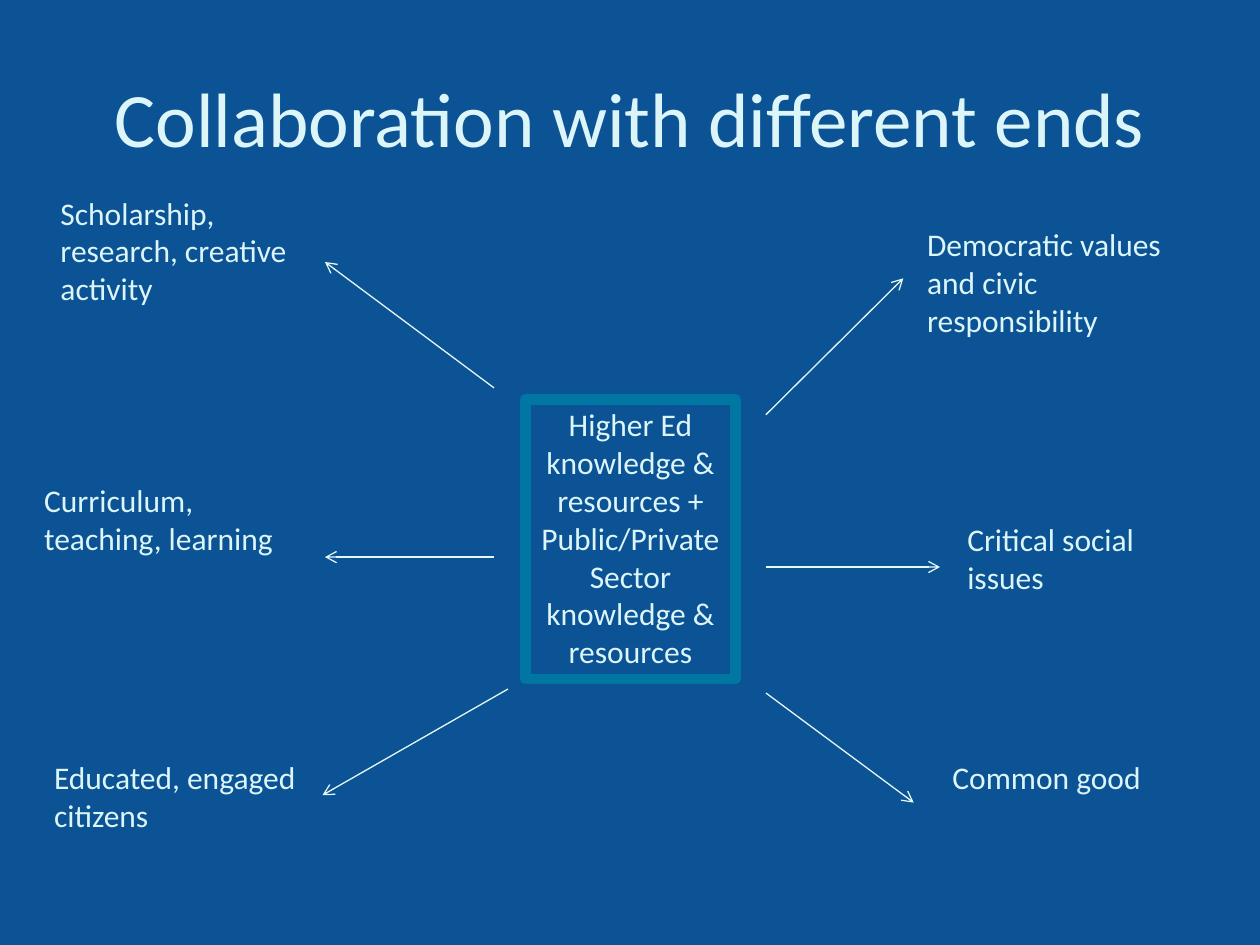
from pptx import Presentation
from pptx.dml.color import RGBColor
from pptx.enum.shapes import MSO_CONNECTOR, MSO_SHAPE
from pptx.enum.text import MSO_ANCHOR, MSO_AUTO_SIZE, PP_ALIGN
from pptx.oxml.ns import qn
from pptx.util import Cm, Pt
from lxml.etree import SubElement

BACKGROUND = RGBColor(0x0B, 0x53, 0x94)
TEXT = RGBColor(0xDB, 0xF5, 0xF9)
BORDER = RGBColor(0x00, 0x76, 0xA3)
ARROW = RGBColor(0xE6, 0xF8, 0xF5)


def write(shape, words, size, align, frame_format):
    """Put one formatted paragraph in a shape."""
    frame = shape.text_frame
    for name, value in frame_format.items():
        setattr(frame, name, value)
    para = frame.paragraphs[0]
    para.alignment = align
    span = para.add_run()
    span.text = words
    for name, value in {"name": "Calibri", "size": Pt(size)}.items():
        setattr(span.font, name, value)
    span.font.color.rgb = TEXT


deck = Presentation()
deck.slide_width, deck.slide_height = Cm(25.4), Cm(19.05)
page = deck.slides.add_slide(deck.slide_layouts[5])
page.background.fill.solid()
page.background.fill.fore_color.rgb = BACKGROUND

# Title
title = page.shapes.title
place = {"left": Cm(1.27), "top": Cm(0.76), "width": Cm(22.86), "height": Cm(3.18)}
for name, value in place.items():
    setattr(title, name, value)
write(title, "Collaboration with different ends", 44, PP_ALIGN.CENTER,
      {"vertical_anchor": MSO_ANCHOR.MIDDLE})

# Shared resources in the centre
label_format = {"word_wrap": True, "auto_size": MSO_AUTO_SIZE.SHAPE_TO_FIT_TEXT,
                "vertical_anchor": MSO_ANCHOR.TOP}
center = page.shapes.add_shape(MSO_SHAPE.RECTANGLE, Cm(10.59), Cm(8.05), Cm(4.24), Cm(5.64))
center.shadow.inherit = False
center.fill.background()
center.line.color.rgb = BORDER
center.line.width = Pt(6)
write(center,
      "Higher Ed knowledge & resources + Public/Private Sector knowledge & resources",
      18, PP_ALIGN.CENTER, label_format)

# Arrows from the centre outwards: start x, start y, end x, end y
arrows = [
    (9.96, 7.82, 6.55, 5.28),
    (9.96, 11.23, 6.55, 11.23),
    (10.24, 13.89, 6.5, 16.03),
    (15.44, 13.97, 18.42, 16.18),
    (15.44, 11.43, 18.95, 11.43),
    (15.44, 8.36, 18.21, 5.61),
]
for ends in arrows:
    arrow = page.shapes.add_connector(MSO_CONNECTOR.STRAIGHT, *map(Cm, ends))
    arrow.line.color.rgb = ARROW
    arrow.line.width = Pt(0.75)
    SubElement(arrow.line._get_or_add_ln(), qn("a:tailEnd"), type="arrow")
    SubElement(arrow._element.spPr, qn("a:effectLst"))

# Ends of the collaboration: left, top, height, words
labels = [
    (0.97, 3.78, 2.57, "Scholarship, research, creative activity"),
    (0.64, 9.58, 1.8, "Curriculum, teaching, learning"),
    (0.84, 15.16, 1.8, "Educated, engaged citizens"),
    (18.44, 4.42, 2.57, "Democratic values and civic responsibility"),
    (19.25, 10.36, 1.8, "Critical social issues"),
    (18.95, 15.16, 1.02, "Common good"),
]
for left, top, height, words in labels:
    box = page.shapes.add_textbox(Cm(left), Cm(top), Cm(5.51), Cm(height))
    write(box, words, 18, PP_ALIGN.LEFT, label_format)

deck.save("out.pptx")
